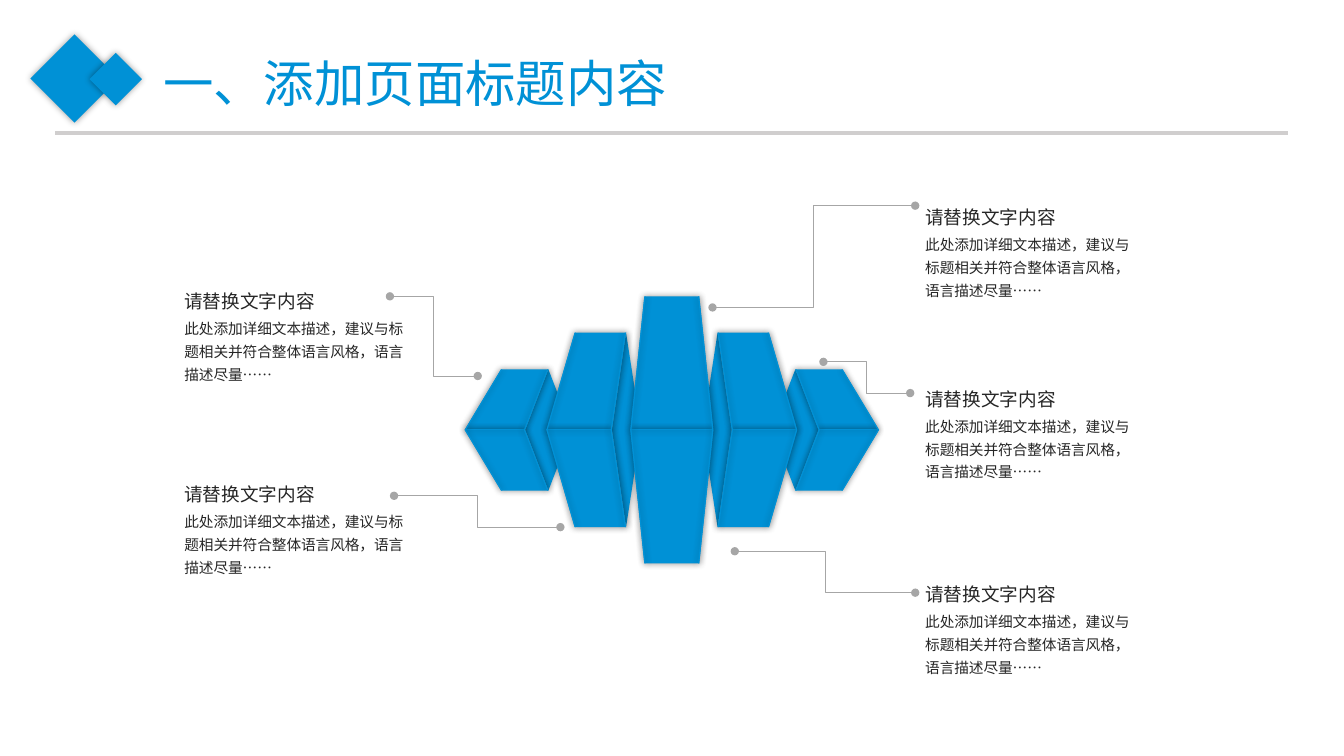
from lxml.etree import SubElement
from pptx import Presentation
from pptx.dml.color import RGBColor
from pptx.enum.shapes import MSO_CONNECTOR as Connector, MSO_SHAPE as Preset
from pptx.enum.text import MSO_AUTO_SIZE as AutoSize, PP_ALIGN as Align
from pptx.oxml.ns import qn
from pptx.util import Pt

BLUE, DARK, GREY, PALE = "0091D6", "262626", "A6A6A6", "D0CECE"
HEADING = "请替换文字内容"
BODY = "此处添加详细文本描述，建议与标题相关并符合整体语言风格，语言描述尽量……"


def color(value):
    return RGBColor.from_string(value)


class Deck:
    """Holds the style and the current slide."""

    font = "Noto Sans CJK SC"

    def __init__(self, width, height):
        self.presentation = Presentation()
        self.presentation.slide_width = Pt(width)
        self.presentation.slide_height = Pt(height)
        self.slide = self.presentation.slides.add_slide(self.presentation.slide_layouts[6])
        self.shapes = self.slide.shapes

    def finish(self, shape):
        """Blue fill, no outline and a soft shadow on all sides."""
        shape.fill.solid()
        shape.fill.fore_color.rgb = color(BLUE)
        shape.line.fill.background()
        shape.shadow.inherit = False
        effects = shape.element.spPr.find(qn("a:effectLst"))
        shadow = SubElement(effects, qn("a:outerShdw"), blurRad=str(Pt(5)), dist="0",
                            dir="0", algn="ctr", rotWithShape="0")
        black = SubElement(shadow, qn("a:srgbClr"), val="000000")
        SubElement(black, qn("a:alpha"), val="40000")

    def diamond(self, left, top, size):
        shape = self.shapes.add_shape(Preset.RECTANGLE, Pt(left), Pt(top), Pt(size), Pt(size))
        shape.rotation = 315
        self.finish(shape)

    def polygon(self, points):
        (x, y), *rest = [(Pt(x), Pt(y)) for x, y in points]
        builder = self.shapes.build_freeform(x, y)
        builder.add_line_segments(rest, close=True)
        self.finish(builder.convert_to_shape())

    def connector(self, kind, start, end, line_color, width, dots=False):
        connector = self.shapes.add_connector(kind, *map(Pt, start + end))
        connector.line.color.rgb = color(line_color)
        connector.line.width = Pt(width)
        properties = connector.element.spPr
        if dots:
            for tag in ("a:headEnd", "a:tailEnd"):
                SubElement(properties.find(qn("a:ln")), qn(tag), type="oval")
        SubElement(properties, qn("a:effectLst"))

    def text(self, text, left, top, width, height, size, text_color, **layout):
        box = self.shapes.add_textbox(Pt(left), Pt(top), Pt(width), Pt(height))
        frame = box.text_frame
        frame.word_wrap = True
        frame.auto_size = AutoSize.SHAPE_TO_FIT_TEXT
        paragraph = frame.paragraphs[0]
        for name, value in layout.items():
            setattr(paragraph, name, value)
        run = paragraph.add_run()
        run.text = text
        for name, value in {"size": Pt(size), "name": self.font}.items():
            setattr(run.font, name, value)
        run.font.color.rgb = color(text_color)
        SubElement(run.font._element if hasattr(run.font, "_element") else run._r.get_or_add_rPr(),
                   qn("a:ea"), typeface=self.font)


# Blocks: offsets from the centre of the figure, outwards positive
CENTER_X, CENTER_Y = 479.9, 307.1
SIDE_BLOCKS = [
    {"tip": 148, "top": 122, "inner_top": 88.2, "inner": 104.8, "far": 71.5, "half": 43.3},
    {"tip": 89.6, "top": 69.4, "inner_top": 32.7, "inner": 42.8, "far": 22, "half": 69.5},
]
CENTER_BLOCK = {"tip": 29.7, "top": 19.6, "half": 95.4}
EDGE, RIDGE = 0.9, 0.4


def place(side, points):
    return [(CENTER_X + side * x, CENTER_Y + y) for x, y in points]


def faces(block, side):
    half, inner, inner_top = block["half"], block["inner"], block["inner_top"]
    yield place(side, [(inner, 0), (inner_top, -half), (block["far"], 0), (inner_top, half)])
    for y in (-half, half):
        yield place(side, [(inner, 0), (inner_top, y), (block["top"], y), (block["tip"], 0)])


def ridge(start, end, side):
    return place(side, [(start, -RIDGE), (end, -RIDGE), (end, RIDGE), (start, RIDGE)])


def edge(end, middle, half, shift, side):
    return place(side, [(end, -half), (middle, 0), (end, half),
                        (end + shift, half), (middle + shift, 0), (end + shift, -half)])


def draw_blocks(deck):
    tip, top, half = CENTER_BLOCK.values()
    polygons = [face for side in (-1, 1) for block in SIDE_BLOCKS for face in faces(block, side)]
    for y in (-half, half):
        polygons.append(place(1, [(-tip, 0), (-top, y), (top, y), (tip, 0)]))
    # Ridges along the middle
    for side in (1, -1):
        polygons += [ridge(block["inner"], block["tip"], side) for block in SIDE_BLOCKS]
    polygons.append(ridge(-tip, tip, 1))
    # Bevelled edges
    for side in (1, -1):
        for block in SIDE_BLOCKS:
            polygons.append(edge(block["top"], block["tip"], block["half"], -EDGE, side))
            polygons.append(edge(block["inner_top"], block["inner"], block["half"], EDGE, side))
    polygons += [edge(top, tip, half, -EDGE, side) for side in (1, -1)]
    for points in polygons:
        deck.polygon(points)


# Callouts: left, heading width, body width, tops
CALLOUTS = [(124.6, 113, 172.1, (200.2, 338.4)),
            (653.8, 111.6, 170.6, (140.4, 409.7, 270))]
LEADERS = [
    ((341.3, 268.6), (278.6, 211.7)),
    ((400.3, 376.6), (281.5, 354.2)),
    ((653.8, 146.9), (509, 219.6)),
    ((650.2, 280.8), (588.2, 258.5)),
    ((653.8, 423.4), (524.9, 393.8)),
]


def main():
    deck = Deck(960, 540)

    # Title bar
    deck.connector(Connector.STRAIGHT, (39.6, 95), (920.2, 95), PALE, 2.25)
    deck.diamond(31, 33.8, 44.6)
    deck.diamond(69.4, 43.2, 26.6)
    deck.text("一、添加页面标题内容", 109.4, 33.8, 447.1, 51.1, 36, BLUE)

    # Figure
    draw_blocks(deck)

    # Callouts and their leader lines
    for left, heading_width, body_width, tops in CALLOUTS:
        for top in tops:
            deck.text(BODY, left, top + 20.9, body_width, 55.4, 10.5, DARK, line_spacing=1.3)
            deck.text(HEADING, left, top, heading_width, 25.2, 13.3, DARK,
                      line_spacing=1.2, alignment=Align.JUSTIFY)
    for start, end in LEADERS:
        deck.connector(Connector.ELBOW, start, end, GREY, 0.5, dots=True)

    deck.presentation.save("out.pptx")


if __name__ == "__main__":
    main()
